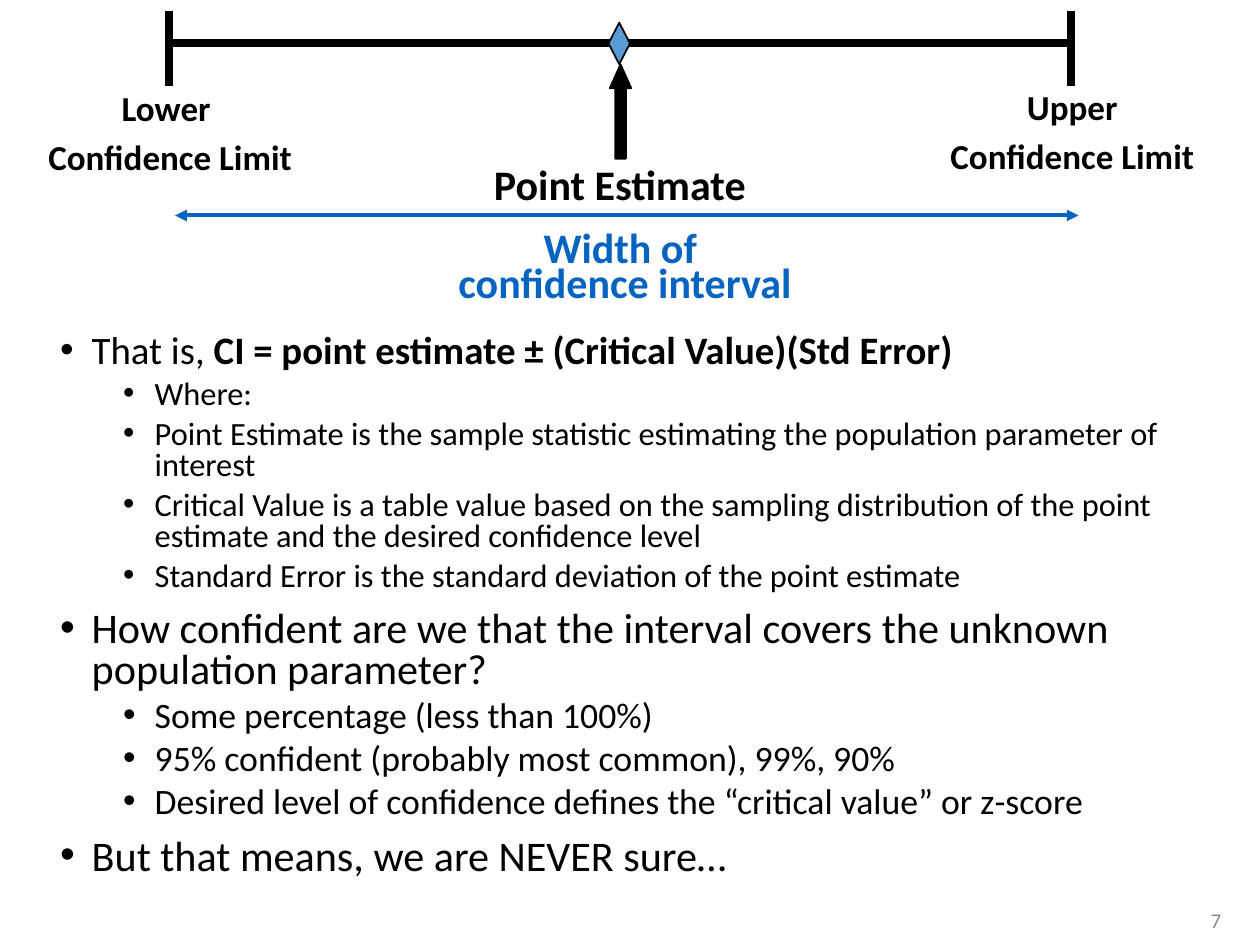
"""Build a slide that explains the confidence interval."""
from dataclasses import dataclass

from lxml import etree
from pptx import Presentation
from pptx.dml.color import RGBColor
from pptx.enum.shapes import MSO_CONNECTOR, MSO_SHAPE
from pptx.enum.text import MSO_ANCHOR, PP_ALIGN
from pptx.oxml.ns import qn
from pptx.util import Emu, Inches, Pt

LEFT, MID, RIGHT = PP_ALIGN.LEFT, PP_ALIGN.CENTER, PP_ALIGN.RIGHT
TOP, HALF = MSO_ANCHOR.TOP, MSO_ANCHOR.MIDDLE
STRAIGHT = MSO_CONNECTOR.STRAIGHT
GEM, ARROW = MSO_SHAPE.DIAMOND, MSO_SHAPE.UP_ARROW
COLS, ROWS = 100, 75


@dataclass(frozen=True)
class Theme:
    """Colours, font and type sizes."""
    ink: str = "000000"
    blue: str = "0563C1"
    gem: str = "5B9BD5"
    gray: str = "8C8C8C"
    font: str = "Calibri"
    title: float = 24
    label: float = 20
    page: float = 12
    lead: float = 22.2
    where: float = 18.5
    main: float = 24.1
    sub: float = 20.4


@dataclass(frozen=True)
class Box:
    """A place on the grid of columns and rows."""
    col: float
    row: float
    wide: float
    high: float


@dataclass(frozen=True)
class Para:
    """One paragraph: plain text, then bold text."""
    text: str
    size: float
    bold: str = ""
    level: int | None = None
    gap: float = 0
    pitch: float = 1


THEME = Theme()
deck = Presentation()
deck.slide_width, deck.slide_height = Inches(10), Inches(7.5)
slide = deck.slides.add_slide(deck.slide_layouts[6])
shapes = slide.shapes


def col(num: float) -> Emu:
    """Turn columns into a length."""
    return Emu(round(deck.slide_width * num / COLS))


def row(num: float) -> Emu:
    """Turn rows into a length."""
    return Emu(round(deck.slide_height * num / ROWS))


def place(box: Box) -> tuple[Emu, Emu, Emu, Emu]:
    """Give the left, top, width and height of a box."""
    return col(box.col), row(box.row), col(box.wide), row(box.high)


def bullet(para, level: int) -> None:
    """Give a paragraph a bullet and a hanging indent."""
    para.level = level
    prop = para._p.get_or_add_pPr()
    prop.set("marL", str(Inches(0.25 + 0.5 * level)))
    prop.set("indent", str(-Inches(0.25)))
    etree.SubElement(prop, qn("a:buFont"), typeface="Arial")
    etree.SubElement(prop, qn("a:buChar"), char="•")


def write(box: Box, paras: list[Para], *, color: str = THEME.ink,
          align: PP_ALIGN = MID, anchor: MSO_ANCHOR = TOP) -> None:
    """Write paragraphs in a text box."""
    frame = shapes.add_textbox(*place(box)).text_frame
    frame.word_wrap, frame.vertical_anchor = True, anchor
    for num, item in enumerate(paras):
        para = frame.add_paragraph() if num else frame.paragraphs[0]
        para.alignment = align
        para.space_before, para.line_spacing = Pt(item.gap), item.pitch
        if item.level is not None:
            bullet(para, item.level)
        for text, bold in ((item.text, False), (item.bold, True)):
            if text:
                run = para.add_run()
                run.text = text
                font = run.font
                font.name, font.size, font.bold = THEME.font, Pt(item.size), bold
                font.color.rgb = RGBColor.from_string(color)


def line(start: tuple[float, float], end: tuple[float, float], color: str,
         width: float, heads: bool = False) -> None:
    """Draw a straight line, with arrowheads at both ends if asked."""
    link = shapes.add_connector(STRAIGHT, col(start[0]), row(start[1]),
                                col(end[0]), row(end[1]))
    link.line.color.rgb = RGBColor.from_string(color)
    link.line.width = Pt(width)
    if heads:
        for tag in ("a:headEnd", "a:tailEnd"):
            etree.SubElement(link.line._get_or_add_ln(), qn(tag), type="triangle")
    etree.SubElement(link._element.spPr, qn("a:effectLst"))


def mark(kind: MSO_SHAPE, box: Box, fill: str, *adjust: float) -> None:
    """Draw a filled shape with a thin outline."""
    shape = shapes.add_shape(kind, *place(box))
    for num, share in enumerate(adjust):
        shape.adjustments[num] = share
    shape.shadow.inherit = False
    shape.fill.solid()
    shape.fill.fore_color.rgb = RGBColor.from_string(fill)
    shape.line.color.rgb = RGBColor.from_string(THEME.ink)
    shape.line.width = Pt(1)


def point(text: str, size: float, bold: str = "") -> Para:
    """Make a first-level bullet."""
    return Para(text, size, bold, level=0, gap=10, pitch=0.8)


def detail(text: str, size: float) -> Para:
    """Make a second-level bullet."""
    return Para(text, size, level=1, gap=5, pitch=0.8)


def limit(box: Box, name: str) -> None:
    """Label one end of the interval."""
    write(box, [Para("", THEME.label, name),
                Para("", THEME.label, "Confidence Limit", gap=4)])


def main() -> None:
    """Draw the slide and save it."""
    where = ["Where:",
             "Point Estimate is the sample statistic estimating the population "
             "parameter of interest",
             "Critical Value is a table value based on the sampling distribution "
             "of the point estimate and the desired confidence level",
             "Standard Error is the standard deviation of the point estimate"]
    levels = ["Some percentage (less than 100%)",
              "95% confident (probably most common), 99%, 90%",
              "Desired level of confidence defines the “critical value” or z-score"]
    write(Box(3.8, 26.1, 92.3, 44.9), [
        point("That is, ", THEME.lead,
              "CI = point estimate ± (Critical Value)(Std Error)"),
        *(detail(text, THEME.where) for text in where),
        point("How confident are we that the interval covers the unknown "
              "population parameter?", THEME.main),
        *(detail(text, THEME.sub) for text in levels),
        point("But that means, we are NEVER sure…", THEME.main),
    ], align=LEFT)
    write(Box(75.4, 71, 22.5, 4), [Para("7", THEME.page)],
          color=THEME.gray, align=RIGHT, anchor=HALF)

    low, high = 13.4, 85
    line((low, 3.4), (high, 3.4), THEME.ink, 4.5)
    for end in (low, high):
        line((end, 0.9), (end, 6.8), THEME.ink, 4.5)
    mark(GEM, Box(48.3, 1.8, 1.7, 3.3), THEME.gem)
    mark(ARROW, Box(48.4, 5.1, 1.7, 7.5), THEME.ink, 0.5, 1.12)
    write(Box(29.6, 12.1, 39.2, 5), [Para("", THEME.title, "Point Estimate")])
    limit(Box(1.4, 6.4, 24.2, 8.4), "Lower ")
    limit(Box(72.2, 6.3, 25.8, 8.4), "Upper")
    line((13.9, 17.1), (85.6, 17.1), THEME.blue, 2.25, heads=True)
    write(Box(30, 17.1, 39.2, 7.5), [
        Para("", THEME.title, "Width of "),
        Para("", THEME.title, "confidence interval", pitch=0.65),
    ], color=THEME.blue)
    deck.save("out.pptx")


if __name__ == "__main__":
    main()
